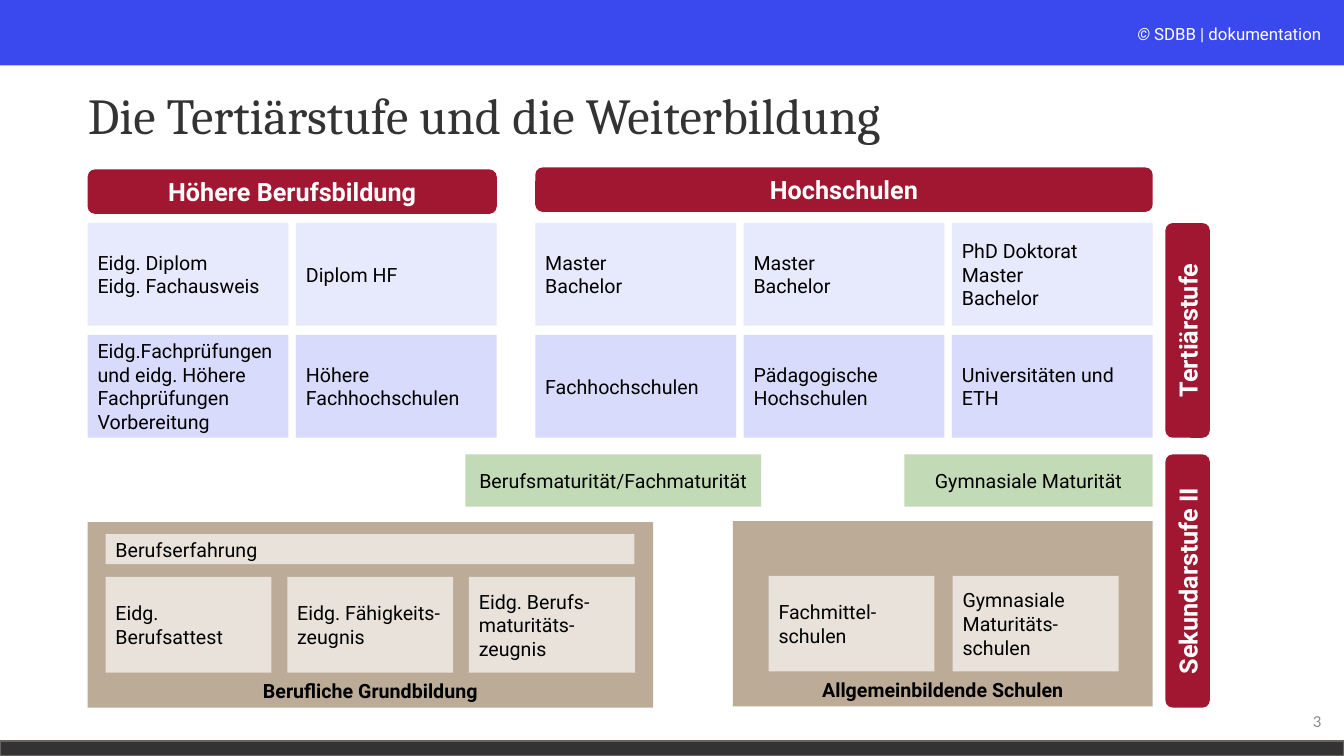
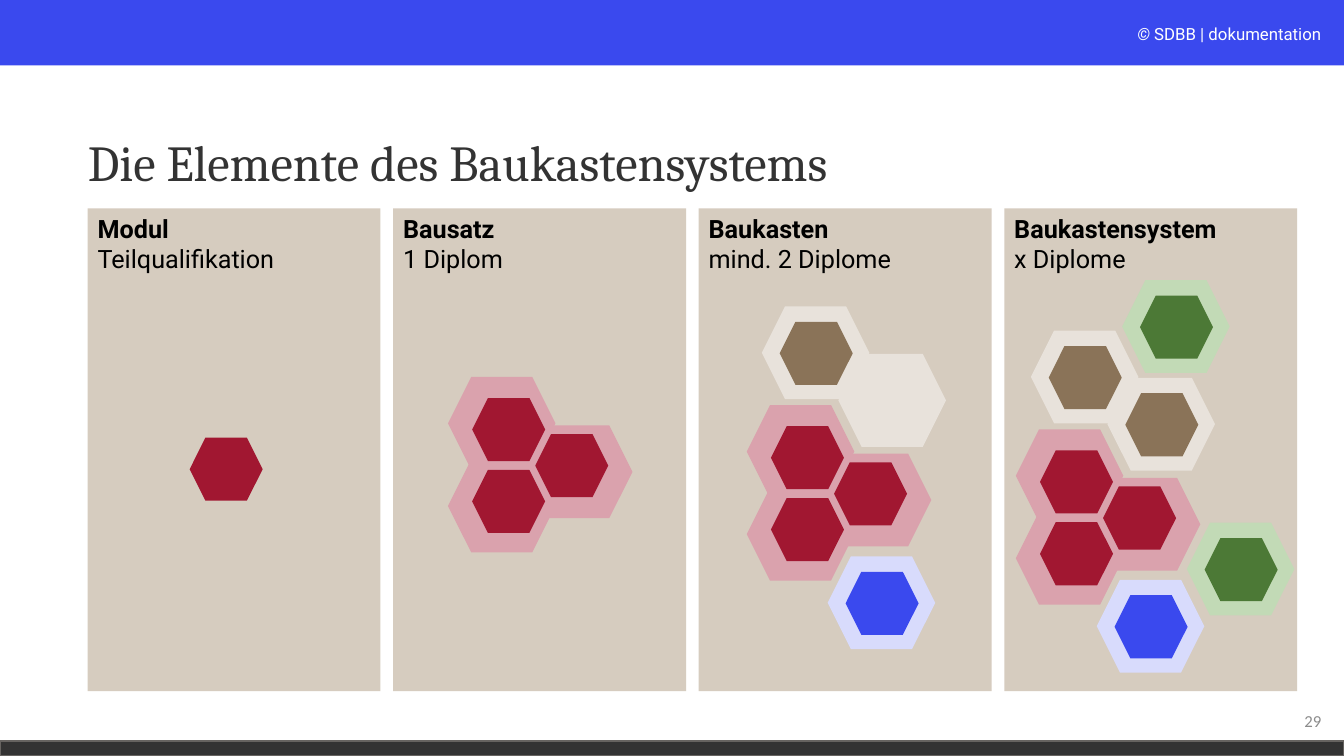
import dataclasses

import pptx
import pptx.dml.color
import pptx.enum.shapes
import pptx.enum.text
import pptx.util

Cm = pptx.util.Cm
RGBColor = pptx.dml.color.RGBColor
Shape = pptx.enum.shapes.MSO_SHAPE
Align = pptx.enum.text.PP_ALIGN
Anchor = pptx.enum.text.MSO_ANCHOR

# Shared colours
WHITE = RGBColor(0xFF, 0xFF, 0xFF)
BLACK = RGBColor(0x00, 0x00, 0x00)
CREDIT_MARK = RGBColor(0xFC, 0xFD, 0xFE)
INK = RGBColor(0x33, 0x33, 0x33)
INK_EDGE = RGBColor(0x66, 0x63, 0x60)
GREY = RGBColor(0x8C, 0x8C, 0x8C)
BLUE = RGBColor(0x3A, 0x49, 0xEE)
BLUE_LIGHT = RGBColor(0xD8, 0xDB, 0xFC)
BLUE_PALE = RGBColor(0xE7, 0xE9, 0xFD)
RED = RGBColor(0xA1, 0x17, 0x31)
RED_LIGHT = RGBColor(0xDA, 0xA2, 0xAD)
GREEN = RGBColor(0x4C, 0x79, 0x36)
GREEN_LIGHT = RGBColor(0xC2, 0xDA, 0xB6)
BROWN = RGBColor(0x8A, 0x73, 0x58)
BROWN_MEDIUM = RGBColor(0xBC, 0xAB, 0x96)
BROWN_LIGHT = RGBColor(0xD6, 0xCC, 0xBF)
BROWN_PALE = RGBColor(0xE8, 0xE2, 0xDB)


# Shared text formats
def font_format(name, size, color, **extra):
    return dict(name=name, size=pptx.util.Pt(size), color=color, **extra)


TITLE = font_format("Cambria", 36, INK)
CREDIT = font_format("Roboto", 12, WHITE)
CREDIT_SIGN = font_format("Roboto", 12, CREDIT_MARK, italic=True)
NUMBER = font_format("Calibri", 12, GREY)
LABEL = font_format("Roboto", 14, BLACK)
LABEL_BOLD = dict(LABEL, bold=True)
BANNER = font_format("Roboto", 18, WHITE, bold=True)
PANEL = font_format("Roboto", 18, BLACK)
PANEL_BOLD = dict(PANEL, bold=True)


@dataclasses.dataclass
class Box:
    """A rectangle in centimetres."""
    left: float
    top: float
    width: float
    height: float

    def inner(self, left, top, width, height):
        return Box(self.left + left, self.top + top, width, height)

    def lengths(self):
        return [Cm(value) for value in (self.left, self.top, self.width, self.height)]


PAGE = Box(0, 0, 33.87, 19.05)


# Basic shapes and text
def add_span(para, text, style):
    span = para.add_run()
    span.text = text
    for key, value in style.items():
        if key == "color":
            span.font.color.rgb = value
        else:
            setattr(span.font, key, value)


def write_lines(frame, lines, align=Align.LEFT, anchor=Anchor.MIDDLE):
    """Each line is a list of (text, style) spans."""
    frame.word_wrap = True
    frame.vertical_anchor = anchor
    for index, spans in enumerate(lines):
        para = frame.paragraphs[0] if index == 0 else frame.add_paragraph()
        para.alignment = align
        for text, style in spans:
            add_span(para, text, style)


def add_block(page, box, fill, text="", style=LABEL, kind=Shape.RECTANGLE, **layout):
    block = page.shapes.add_shape(kind, *box.lengths())
    block.shadow.inherit = False
    block.fill.solid()
    block.fill.fore_color.rgb = fill
    block.line.fill.background()
    if text:
        lines = [[(line, style)] for line in text.split("\n")]
        write_lines(block.text_frame, lines, **layout)
    return block


def add_text(page, box, spans, anchor):
    text_box = page.shapes.add_textbox(*box.lengths())
    write_lines(text_box.text_frame, [spans], Align.RIGHT, anchor)
    return text_box


def add_banner(page, box, text):
    return add_block(page, box, RED, text, BANNER, Shape.ROUNDED_RECTANGLE,
                     align=Align.CENTER)


def add_upright_banner(page, box, text):
    """A banner turned to read upwards inside the box."""
    shift = (box.width - box.height) / 2
    banner = add_banner(page, box.inner(shift, -shift, box.height, box.width), text)
    banner.rotation = 270


# Frame shared by the slides
def build_layout(layout, page):
    """Draw bands and credit on the page, then move them into its layout."""
    top_band = add_block(page, PAGE.inner(0, 0, PAGE.width, 1.65), BLUE)
    bottom_band = add_block(page, PAGE.inner(0, 18.67, PAGE.width, 0.38), INK)
    bottom_band.line.color.rgb = INK_EDGE
    bottom_band.line.width = pptx.util.Pt(1)
    credit = add_text(page, PAGE.inner(21.9, 0.48, 11.65, 0.76),
                      [("© ", CREDIT_SIGN), ("SDBB | dokumentation", CREDIT)], Anchor.TOP)
    tree = layout.shapes._spTree
    for index, shape in enumerate([top_band, bottom_band, credit]):
        shape._element.nvSpPr.cNvPr.set("id", str(20 + index))
        tree.insert(2 + index, shape._element)


def start_page(page, title, title_top, number):
    heading = page.shapes.title
    title_box = Box(1.96, title_top, 22.4, 3.68)
    for key, value in zip(("left", "top", "width", "height"), title_box.lengths()):
        setattr(heading, key, value)
    write_lines(heading.text_frame, [[(title, TITLE)]])
    heading.text_frame.auto_size = pptx.enum.text.MSO_AUTO_SIZE.NONE
    heading.text_frame.paragraphs[0].line_spacing = 0.9
    add_text(page, PAGE.inner(25.93, 17.65, 7.62, 1.02), [(number, NUMBER)], Anchor.MIDDLE)


# Slide: education levels
def add_tertiary(page, box, columns):
    """Diplomas above the schools that award them."""
    cell_width, cell_height, column_step, row_step = 5.06, 2.59, 5.25, 2.82
    for column, texts in enumerate(columns):
        for row, (text, fill) in enumerate(zip(texts, (BLUE_PALE, BLUE_LIGHT))):
            cell = box.inner(column * column_step, row * row_step, cell_width, cell_height)
            add_block(page, cell, fill, text)


def add_school_group(page, box, name, inset, step, schools):
    add_block(page, box, BROWN_MEDIUM, name, LABEL_BOLD,
              align=Align.CENTER, anchor=Anchor.BOTTOM)
    for index, school in enumerate(schools):
        add_block(page, box.inner(inset + index * step, 1.38, 4.18, 2.41), BROWN_PALE, school)


def build_levels(page):
    start_page(page, "Die Tertiärstufe und die Weiterbildung", 1.14, "3")

    # Upper secondary schools
    general = Box(18.47, 13.13, 10.58, 4.67)
    add_school_group(page, general, "Allgemeinbildende Schulen", 0.9, 4.64,
                     ["Fachmittel-schulen", "Gymnasiale Maturitäts-schulen"])
    vocational = Box(2.21, 13.16, 14.25, 4.67)
    add_school_group(page, vocational, "Berufliche Grundbildung", 0.45, 4.58,
                     ["Eidg. Berufsattest", "Eidg. Fähigkeits-zeugnis",
                      "Eidg. Berufs-maturitäts-zeugnis"])
    add_block(page, vocational.inner(0.45, 0.3, 13.33, 0.76), BROWN_PALE, "Berufserfahrung")

    # Access to the tertiary level
    for box, text in [(Box(11.73, 11.45, 7.45, 1.32), "Berufsmaturität/Fachmaturität"),
                      (Box(22.79, 11.45, 6.26, 1.32), "Gymnasiale Maturität")]:
        add_block(page, box, GREEN_LIGHT, text, align=Align.CENTER)

    # Tertiary level
    add_tertiary(page, Box(2.21, 5.62, 10.31, 5.41), [
        ("Eidg. Diplom\nEidg. Fachausweis",
         "Eidg.Fachprüfungen\nund eidg. Höhere Fachprüfungen\nVorbereitung"),
        ("Diplom HF", "Höhere\nFachhochschulen"),
    ])
    add_tertiary(page, Box(13.49, 5.62, 15.56, 5.41), [
        ("Master\nBachelor", "Fachhochschulen"),
        ("Master\nBachelor", "Pädagogische Hochschulen"),
        ("PhD Doktorat\nMaster\nBachelor", "Universitäten und ETH"),
    ])

    # Headings and level bars
    add_banner(page, Box(2.21, 4.27, 10.31, 1.12), "Höhere Berufsbildung")
    add_banner(page, Box(13.49, 4.22, 15.56, 1.12), "Hochschulen")
    add_upright_banner(page, Box(29.37, 5.62, 1.12, 5.41), "Tertiärstufe")
    add_upright_banner(page, Box(29.37, 11.45, 1.12, 6.38), "Sekundarstufe II")


# Slide: building blocks
def add_ring(page, box, left, top, fill):
    add_block(page, box.inner(left, top, 2.71, 2.34), fill, kind=Shape.HEXAGON)


def add_core(page, box, left, top, fill):
    add_block(page, box.inner(left, top, 1.84, 1.59), fill, kind=Shape.HEXAGON)


def add_module(page, box, left, top, ring, core):
    add_ring(page, box, left, top, ring)
    add_core(page, box, left + 0.45, top + 0.39, core)


def add_kit(page, box, left, top):
    """Three joined red modules."""
    for x, y in [(0, 2.08), (1.94, 1.22), (0, 0)]:
        add_ring(page, box, left + x, top + y, RED_LIGHT)
    for x, y in [(0.61, 2.34), (0.61, 0.53), (2.2, 1.44)]:
        add_core(page, box, left + x, top + y, RED)


def add_panel(page, box, name, detail):
    panel = add_block(page, box, BROWN_LIGHT)
    write_lines(panel.text_frame, [[(name, PANEL_BOLD)], [(detail, PANEL)]],
                anchor=Anchor.TOP)


def build_elements(page):
    start_page(page, "Die Elemente des Baukastensystems", 2.31, "29")
    boxes = [Box(2.21 + index * 7.7, 5.25, 7.38, 12.17) for index in range(4)]
    names = [("Modul", "Teilqualifikation"), ("Bausatz", "1 Diplom"),
             ("Baukasten", "mind. 2 Diplome"), ("Baukastensystem", "x Diplome")]
    for box, (name, detail) in zip(boxes, names):
        add_panel(page, box, name, detail)
    single, kit, construction, system = boxes

    add_core(page, single, 2.57, 5.78, RED)
    add_kit(page, kit, 1.38, 4.25)

    add_kit(page, construction, 1.21, 4.96)
    add_ring(page, construction, 3.52, 3.67, BROWN_PALE)
    add_module(page, construction, 1.59, 2.47, BROWN_PALE, BROWN)
    add_module(page, construction, 3.25, 8.77, BLUE_LIGHT, BLUE)

    add_kit(page, system, 0.29, 5.57)
    for left, top, ring, core in [(2.6, 4.27, BROWN_PALE, BROWN),
                                  (0.67, 3.08, BROWN_PALE, BROWN),
                                  (2.33, 9.36, BLUE_LIGHT, BLUE),
                                  (4.6, 7.92, GREEN_LIGHT, GREEN),
                                  (2.97, 1.81, GREEN_LIGHT, GREEN)]:
        add_module(page, system, left, top, ring, core)


def main():
    deck = pptx.Presentation()
    deck.slide_width, deck.slide_height = Cm(PAGE.width), Cm(PAGE.height)
    layout = deck.slide_layouts[5]
    levels, elements = [deck.slides.add_slide(layout) for _ in range(2)]
    build_layout(layout, levels)
    build_levels(levels)
    build_elements(elements)
    deck.save("out.pptx")


if __name__ == "__main__":
    main()
